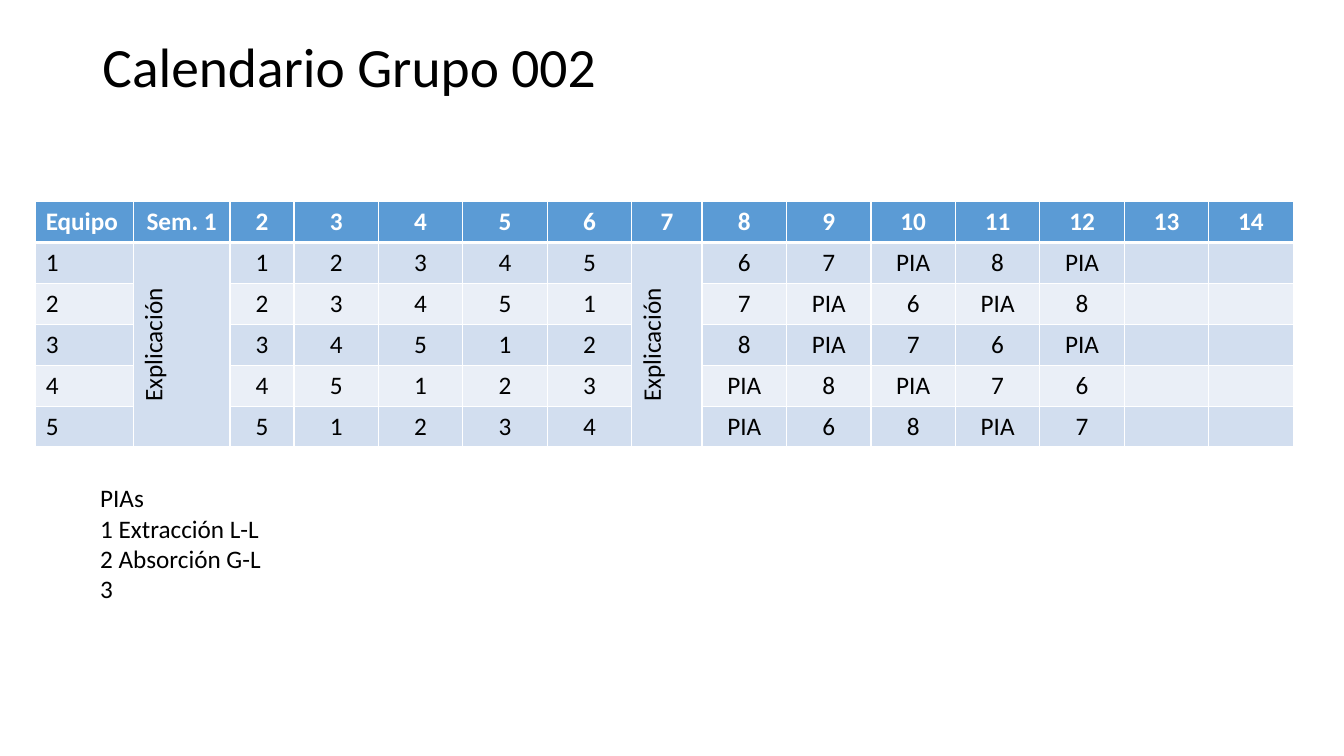
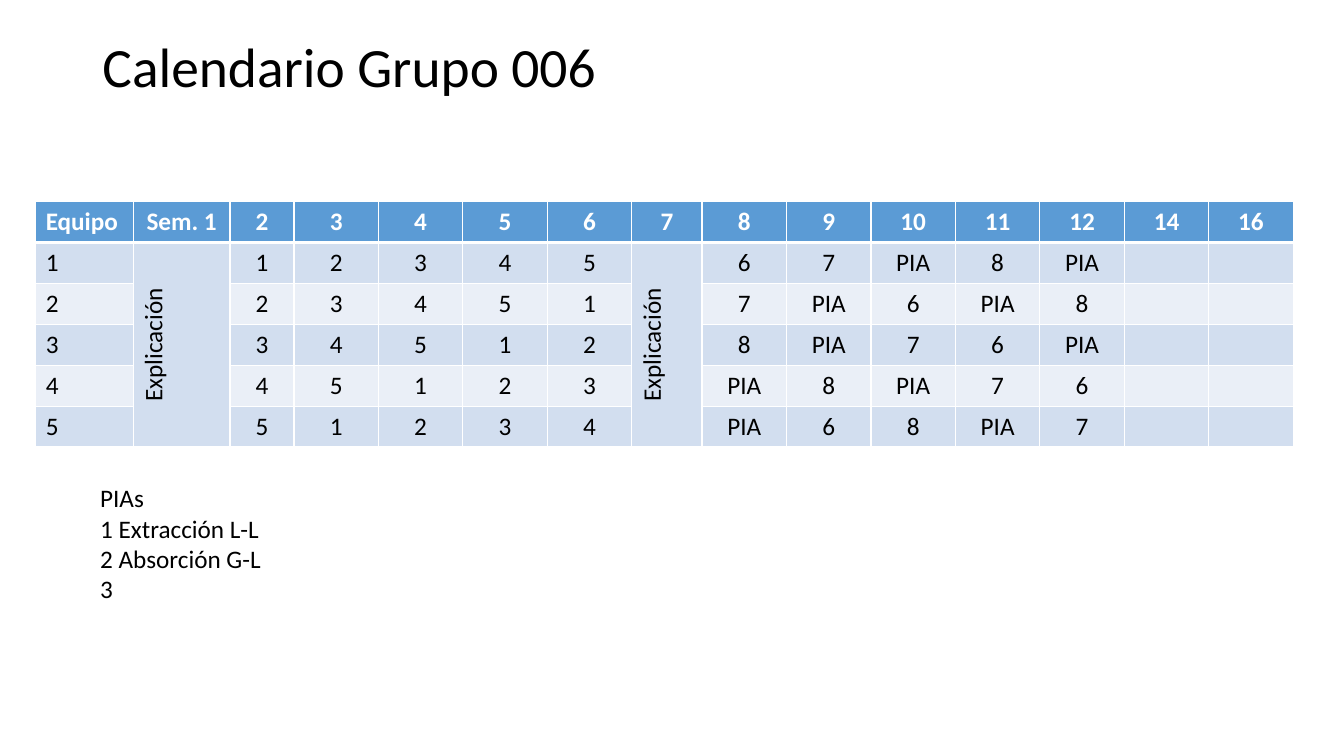
import dataclasses

import lxml.etree
import pptx
import pptx.dml.color
import pptx.enum.text
import pptx.oxml.ns
import pptx.util


@dataclasses.dataclass(frozen=True)
class Theme:
    font: str = "Calibri"
    ink: str = "000000"
    paper: str = "FFFFFF"
    header: str = "5B9BD5"
    bands: tuple = ("D2DEEF", "EAEFF7")
    title_size: float = 39.6
    body_size: float = 18
    thin_line: int = 1
    thick_line: int = 3


THEME = Theme()
ALIGN = pptx.enum.text.PP_ALIGN
EMU_PER_PX = 9525
PAGE_SIZE = (1280, 720)
TITLE_BOX = (88, 38, 1104, 57)
CALENDAR_BOX = (34, 192, 1198, 234)
NOTE_BOX = (86, 455, 1004, 126)

SPECIAL_WIDTHS = {0: 93, 1: 92, 2: 61, 7: 67}
EXPLANATION_COLUMNS = (1, 7)
TEAMS = 5
FIRST_WEEKS = ["Equipo", "Sem. 1", *map(str, range(2, 13))]
LATE_SESSIONS = [
    ["6", "7", "PIA", "8", "PIA"],
    ["7", "PIA", "6", "PIA", "8"],
    ["8", "PIA", "7", "6", "PIA"],
    ["PIA", "8", "PIA", "7", "6"],
    ["PIA", "6", "8", "PIA", "7"],
]
PROJECTS = ["PIAs", "1 Extracción L-L", "2 Absorción G-L", "3"]
GROUPS = [("002", ["13", "14"]), ("006", ["14", "16"])]


def px(length):
    return pptx.util.Emu(round(length * EMU_PER_PX))


def rgb(color):
    return pptx.dml.color.RGBColor.from_string(color)


def write_text(frame, text, size=THEME.body_size, color=THEME.ink, bold=False,
               align=ALIGN.LEFT, line_spacing=None):
    frame.word_wrap = True
    frame.text = text
    for para in frame.paragraphs:
        para.alignment = align
        para.line_spacing = line_spacing
        for span in para.runs:
            span.font.name = THEME.font
            span.font.size = pptx.util.Pt(size)
            span.font.bold = bold
            span.font.color.rgb = rgb(color)


def set_borders(cell, **widths):
    properties = cell._tc.get_or_add_tcPr()
    for side in "LRTB":
        width = pptx.util.Pt(widths.get(side, THEME.thin_line))
        line = lxml.etree.SubElement(properties, pptx.oxml.ns.qn(f"a:ln{side}"), w=str(width))
        fill = lxml.etree.SubElement(line, pptx.oxml.ns.qn("a:solidFill"))
        lxml.etree.SubElement(fill, pptx.oxml.ns.qn("a:srgbClr"), val=THEME.paper)


def team_row(team):
    rotation = [str((team + week) % TEAMS + 1) for week in range(TEAMS)]
    explanation = "Explicación" if team == 0 else ""
    return [str(team + 1), explanation, *rotation, explanation, *LATE_SESSIONS[team], "", ""]


def format_cell(cell, text, row, column):
    is_header = row == 0
    if is_header:
        set_borders(cell, B=THEME.thick_line)
    elif row == 1:
        set_borders(cell, T=THEME.thick_line)
    else:
        set_borders(cell)
    cell.fill.solid()
    cell.fill.fore_color.rgb = rgb(THEME.header if is_header else THEME.bands[(row - 1) % 2])
    if text:
        write_text(cell.text_frame, text, bold=is_header,
                   color=THEME.paper if is_header else THEME.ink,
                   align=ALIGN.CENTER if column else ALIGN.LEFT)


def add_title(page, box, text):
    title = page.shapes.title
    title.left, title.top, title.width, title.height = map(px, box)
    title.text_frame.vertical_anchor = pptx.enum.text.MSO_ANCHOR.MIDDLE
    write_text(title.text_frame, text, size=THEME.title_size, line_spacing=0.9)


def add_calendar(page, box, last_weeks):
    rows = [FIRST_WEEKS + last_weeks, *map(team_row, range(TEAMS))]
    width, height = box[2:]
    columns = len(rows[0])
    regular = (width - sum(SPECIAL_WIDTHS.values())) / (columns - len(SPECIAL_WIDTHS))
    table = page.shapes.add_table(len(rows), columns, *map(px, box)).table
    table.horz_banding = False
    for index, column in enumerate(table.columns):
        column.width = px(SPECIAL_WIDTHS.get(index, regular))
    for row, texts in enumerate(rows):
        table.rows[row].height = px(height / len(rows))
        for column, text in enumerate(texts):
            format_cell(table.cell(row, column), text, row, column)
    for column in EXPLANATION_COLUMNS:
        cell = table.cell(1, column)
        cell.merge(table.cell(TEAMS, column))
        cell._tc.get_or_add_tcPr().set("vert", "vert270")


def add_note(page, box, lines):
    note = page.shapes.add_textbox(*map(px, box))
    write_text(note.text_frame, "\n".join(lines))


def add_calendar_page(deck, group, last_weeks):
    page = deck.slides.add_slide(deck.slide_layouts.get_by_name("Title Only"))
    add_title(page, TITLE_BOX, f"Calendario Grupo {group}")
    add_calendar(page, CALENDAR_BOX, last_weeks)
    add_note(page, NOTE_BOX, PROJECTS)


def main():
    deck = pptx.Presentation()
    deck.slide_width, deck.slide_height = map(px, PAGE_SIZE)
    for group, last_weeks in GROUPS:
        add_calendar_page(deck, group, last_weeks)
    deck.save("out.pptx")


if __name__ == "__main__":
    main()
